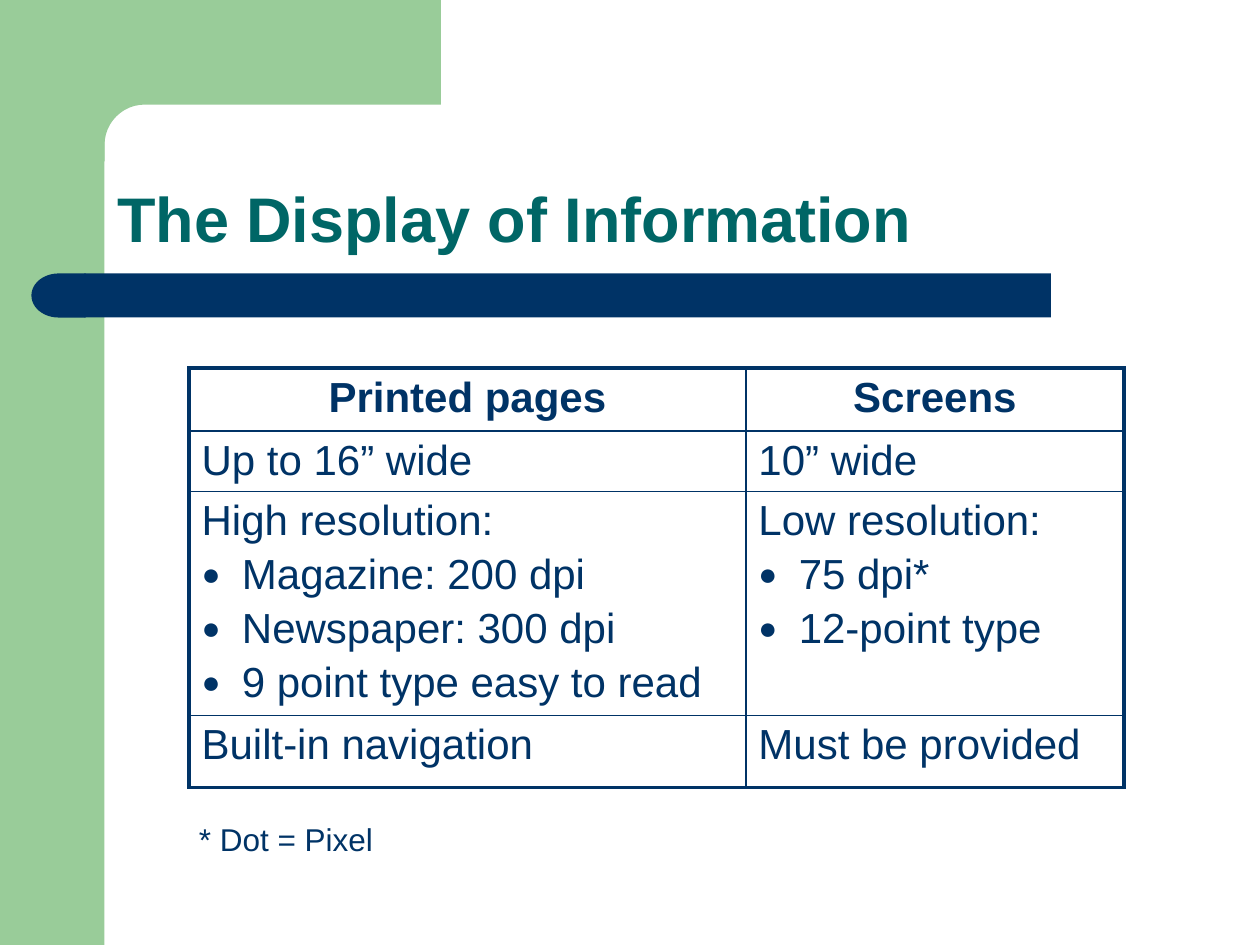
from math import cos, pi, sin

from lxml import etree
from pptx import Presentation
from pptx.dml.color import RGBColor
from pptx.enum.shapes import MSO_SHAPE as Shape
from pptx.enum.text import MSO_ANCHOR as Anchor, MSO_AUTO_SIZE as AutoSize, PP_ALIGN as Align
from pptx.oxml.ns import qn
from pptx.util import Inches, Pt

GREEN, NAVY, TEAL = "99CC99", "003366", "006666"
FONT = "Arial"
THIN, THICK = 1, 2.25

# A leading "•" marks a bulleted line
ROWS = [
    (["Printed pages"], ["Screens"]),
    (["Up to 16” wide"], ["10” wide"]),
    (["High resolution:", "•Magazine: 200 dpi", "•Newspaper: 300 dpi",
      "•9 point type easy to read"],
     ["Low resolution:", "•75 dpi*", "•12-point type"]),
    (["Built-in navigation"], ["Must be provided"]),
]
COLUMN_WIDTHS = [4.42, 3]
ROW_HEIGHTS = [0.5, 0.48, 1.78, 0.57]


def color(hex_string):
    return RGBColor.from_string(hex_string)


def box_lengths(box):
    return [Inches(value) for value in box]


def set_font(paragraph, size, hex_string, bold=False):
    font = paragraph.font
    font.name, font.size, font.bold = FONT, Pt(size), bold
    font.color.rgb = color(hex_string)


def paint(shape, hex_string):
    shape.shadow.inherit = False
    shape.fill.solid()
    shape.fill.fore_color.rgb = color(hex_string)
    shape.line.fill.background()


def add_frame(slide, box, band, arm_right, radius):
    """Green band on the left and top, with a rounded inner corner."""
    left, top, width, height = box
    side = slide.shapes.add_shape(Shape.RECTANGLE, *box_lengths((left, top, band, height)))
    paint(side, GREEN)
    # Quarter circle running from the top arm down to the side band
    center, steps = band + radius, 12
    angles = [pi / 2 * step / steps for step in range(steps + 1)]
    corner = [(left + center - radius * sin(angle), top + center - radius * cos(angle))
              for angle in angles]
    start = left + 0.5
    outline = [(arm_right, top), (arm_right, top + band), *corner,
               (left + band, top + 1.28), (start, top + 1.28)]
    builder = slide.shapes.build_freeform(Inches(start), Inches(top))
    builder.add_line_segments([(Inches(x), Inches(y)) for x, y in outline])
    paint(builder.convert_to_shape(), GREEN)


def add_title_bar(slide, box, cap_width):
    """Navy bar with a round left end."""
    left, top, width, height = box
    bar_left = left + cap_width - 0.01
    bar = slide.shapes.add_shape(
        Shape.RECTANGLE, *box_lengths((bar_left, top, left + width - bar_left, height)))
    cap = slide.shapes.add_shape(
        Shape.FLOWCHART_DELAY, *box_lengths((left, top, cap_width, height)))
    cap.element.spPr.find(qn("a:xfrm")).set("flipH", "1")
    for shape in (bar, cap):
        paint(shape, NAVY)


def add_title(slide, box, text):
    title = slide.shapes.title
    title.left, title.top, title.width, title.height = box_lengths(box)
    frame = title.text_frame
    frame.text = text
    frame.auto_size = AutoSize.NONE
    frame.vertical_anchor = Anchor.BOTTOM
    paragraph = frame.paragraphs[0]
    paragraph.alignment, paragraph.line_spacing = Align.LEFT, 0.9
    set_font(paragraph, 36, TEAL, bold=True)


def add_bullet(paragraph):
    properties = paragraph._p.get_or_add_pPr()
    properties.set("marL", str(Inches(0.32)))
    properties.set("indent", str(-Inches(0.32)))
    bullet_color = etree.SubElement(properties, qn("a:buClr"))
    etree.SubElement(bullet_color, qn("a:srgbClr"), val=NAVY)
    etree.SubElement(properties, qn("a:buSzPct"), val="75000")
    etree.SubElement(properties, qn("a:buFont"), typeface=FONT)
    etree.SubElement(properties, qn("a:buChar"), char="●")


def set_borders(cell, widths):
    properties = cell._tc.get_or_add_tcPr()
    for side, width in zip("LRTB", widths):
        line = etree.SubElement(properties, qn(f"a:ln{side}"), w=str(Pt(width)))
        fill = etree.SubElement(line, qn("a:solidFill"))
        etree.SubElement(fill, qn("a:srgbClr"), val=NAVY)


def fill_cell(cell, lines, header):
    frame = cell.text_frame
    for index, line in enumerate(lines):
        paragraph = frame.add_paragraph() if index else frame.paragraphs[0]
        paragraph.text = line.removeprefix("•")
        if line.startswith("•"):
            add_bullet(paragraph)
        if index:
            paragraph.space_before = Pt(4)
        paragraph.alignment = Align.CENTER if header else Align.LEFT
        set_font(paragraph, 24, NAVY, bold=header)


def add_comparison(slide, left, top):
    """Comparison table: thick outer edge, thin inner lines."""
    box = (left, top, sum(COLUMN_WIDTHS), sum(ROW_HEIGHTS))
    last_row, last_column = len(ROWS) - 1, len(COLUMN_WIDTHS) - 1
    table = slide.shapes.add_table(len(ROWS), len(COLUMN_WIDTHS), *box_lengths(box)).table
    table.first_row = table.horz_banding = False
    for column, width in zip(table.columns, COLUMN_WIDTHS):
        column.width = Inches(width)
    for r, (height, row) in enumerate(zip(ROW_HEIGHTS, ROWS)):
        table.rows[r].height = Inches(height)
        for c, lines in enumerate(row):
            cell = table.cell(r, c)
            fill_cell(cell, lines, header=r == 0)
            edges = (c == 0, c == last_column, r == 0, r == last_row)
            set_borders(cell, [THICK if edge else THIN for edge in edges])
            cell.fill.background()


def add_footnote(slide, box, text):
    frame = slide.shapes.add_textbox(*box_lengths(box)).text_frame
    frame.word_wrap = False
    frame.auto_size = AutoSize.SHAPE_TO_FIT_TEXT
    frame.text = text
    set_font(frame.paragraphs[0], 18, NAVY)


def main():
    presentation = Presentation()
    presentation.slide_width, presentation.slide_height = Inches(10), Inches(7.5)
    slide = presentation.slides.add_slide(presentation.slide_layouts[5])
    add_frame(slide, (0, 0, 10, 7.5), band=0.83, arm_right=3.5, radius=0.32)
    add_title_bar(slide, (0.25, 2.17, 8.09, 0.35), cap_width=0.43)
    add_title(slide, (0.83, 0.83, 8.67, 1.25), "The Display of Information")
    add_comparison(slide, 1.5, 2.92)
    add_footnote(slide, (1.48, 6.46, 1.58, 0.4), "* Dot = Pixel")
    presentation.save("out.pptx")


if __name__ == "__main__":
    main()
